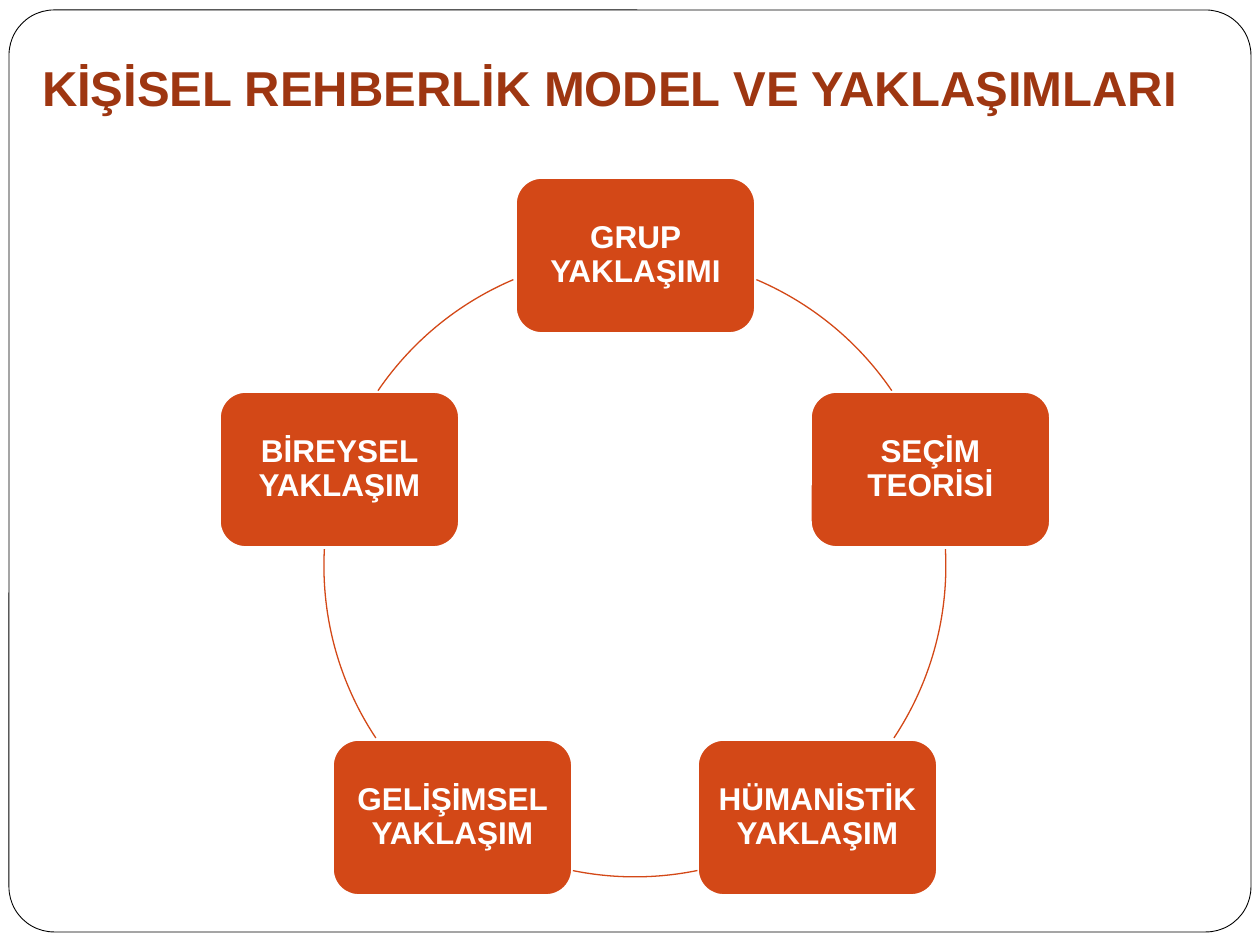
from dataclasses import dataclass
from math import cos, radians, sin

from pptx import Presentation
from pptx.dml.color import RGBColor
from pptx.enum.shapes import MSO_SHAPE
from pptx.enum.text import MSO_ANCHOR, MSO_AUTO_SIZE, PP_ALIGN
from pptx.util import Emu, Pt

PX = 914400 // 126
FONT = "Arial"
COLORS = {
    "white": "FFFFFF",
    "black": "000000",
    "title": "9E3611",
    "accent": "D34817",
}
CENTER_X, CENTER_Y, RADIUS = 635, 566, 311
BOX_W, BOX_H, BOX_INSET = 239, 155, 8


@dataclass
class Step:
    """A box on the ring and the clockwise arc, in degrees, that follows it."""
    label: str
    arc_start: float
    arc_end: float


STEPS = [
    Step("GRUP YAKLAŞIMI", 293, 325.7),
    Step("SEÇİM TEORİSİ", 356.9, 33.6),
    Step("HÜMANİSTİK YAKLAŞIM", 78.4, 101.6),
    Step("GELİŞİMSEL YAKLAŞIM", 146.4, 183.1),
    Step("BİREYSEL YAKLAŞIM", 214.3, 247),
]


def px(n: int) -> Emu:
    return Emu(n * PX)


def color(name: str) -> RGBColor:
    return RGBColor.from_string(COLORS[name])


def add_shape(s, kind, x: int, y: int, w: int, h: int,
              fill: str | None, line: str, width: float):
    sp = s.shapes.add_shape(kind, px(x), px(y), px(w), px(h))
    sp.shadow.inherit = False
    if fill:
        sp.fill.solid()
        sp.fill.fore_color.rgb = color(fill)
    else:
        sp.fill.background()
    sp.line.color.rgb = color(line)
    sp.line.width = Pt(width)
    return sp


def set_text(sp, text: str, size: int, color_name: str, align, anchor,
             insets: tuple[int, int, int, int]) -> None:
    """Fill a shape with one bold paragraph; insets are left, top, right, bottom."""
    tf = sp.text_frame
    tf.text = text
    tf.word_wrap = True
    tf.auto_size = MSO_AUTO_SIZE.NONE
    tf.vertical_anchor = anchor
    tf.margin_left, tf.margin_top, tf.margin_right, tf.margin_bottom = map(px, insets)
    p = tf.paragraphs[0]
    p.alignment = align
    p.font.name = FONT
    p.font.size = Pt(size)
    p.font.bold = True
    p.font.color.rgb = color(color_name)


def add_frame(s) -> None:
    """Draw the rounded page border behind everything else."""
    sp = add_shape(s, MSO_SHAPE.ROUNDED_RECTANGLE, 9, 10, 1242, 922,
                   "white", "black", 0.5)
    sp.adjustments[0] = 0.049
    s.shapes.element.insert(2, sp.element)


def add_title(s, text: str) -> None:
    sp = s.shapes.title
    sp.left, sp.top, sp.width, sp.height = map(px, (29, 38, 1201, 91))
    set_text(sp, text, 28, "title", PP_ALIGN.LEFT, MSO_ANCHOR.BOTTOM, (13, 6, 13, 13))


def add_box(s, step: Step, angle: float) -> None:
    x = round(CENTER_X + RADIUS * cos(radians(angle)) - BOX_W / 2)
    y = round(CENTER_Y + RADIUS * sin(radians(angle)) - BOX_H / 2)
    sp = add_shape(s, MSO_SHAPE.ROUNDED_RECTANGLE, x, y, BOX_W, BOX_H,
                   "accent", "white", 1)
    set_text(sp, step.label, 18, "white", PP_ALIGN.CENTER, MSO_ANCHOR.MIDDLE,
             (BOX_INSET,) * 4)
    sp.text_frame.paragraphs[0].line_spacing = 0.9


def add_arc(s, step: Step) -> None:
    sp = add_shape(s, MSO_SHAPE.ARC, CENTER_X - RADIUS, CENTER_Y - RADIUS,
                   2 * RADIUS, 2 * RADIUS, None, "accent", 0.75)
    # Arc angles are 60000ths of a degree; adjustments are scaled by 100000.
    sp.adjustments[0] = step.arc_start * 0.6
    sp.adjustments[1] = step.arc_end * 0.6


def main() -> None:
    prs = Presentation()
    prs.slide_width, prs.slide_height = px(1260), px(945)
    s = prs.slides.add_slide(prs.slide_layouts[5])
    add_frame(s)
    add_title(s, "KİŞİSEL REHBERLİK MODEL VE YAKLAŞIMLARI")
    for i, step in enumerate(STEPS):
        add_box(s, step, -90 + i * 360 / len(STEPS))
        add_arc(s, step)
    prs.save("out.pptx")


if __name__ == "__main__":
    main()
